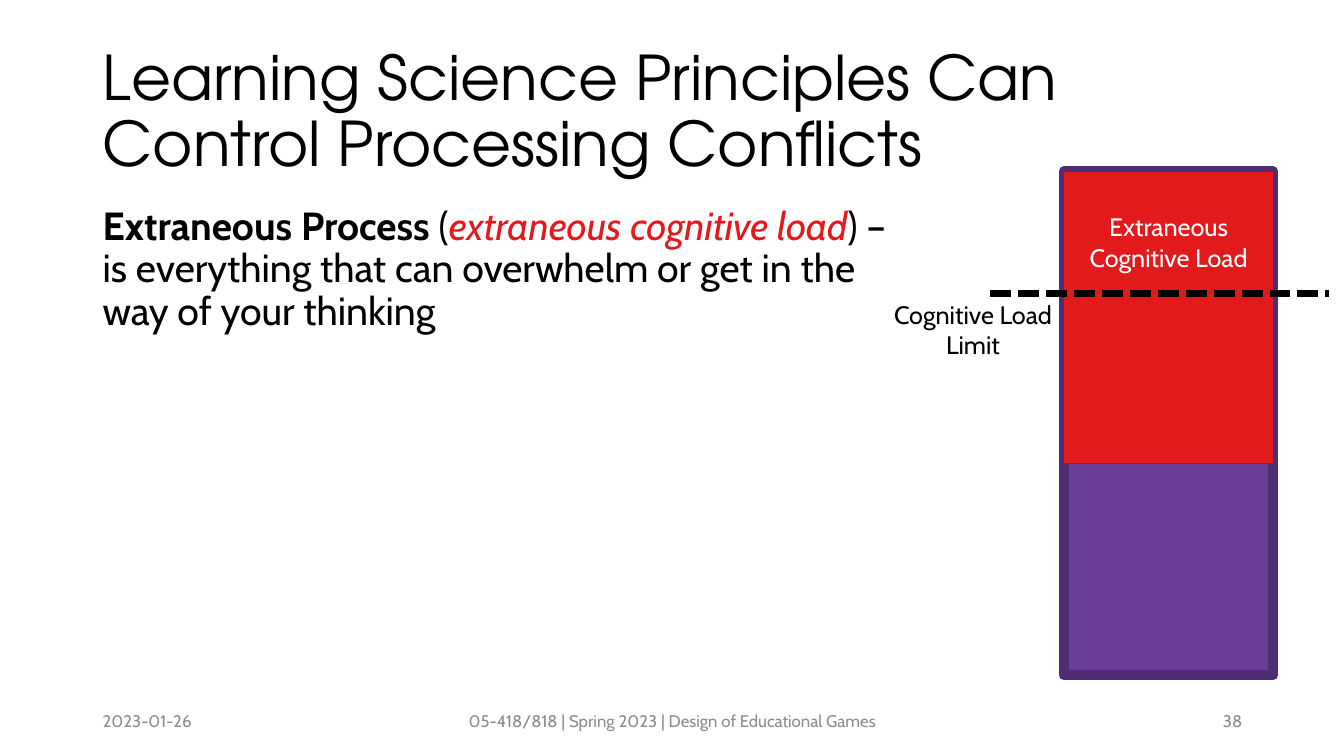
from lxml import etree
from pptx import Presentation
from pptx import util as u
from pptx.dml.color import RGBColor
from pptx.enum import dml, shapes, text
from pptx.oxml.ns import qn

COLORS = {"black": "000000", "white": "FFFFFF", "gray": "8C8C8C",
          "red": "E31A1C", "dark_red": "A81315",
          "purple": "6A3D99", "dark_purple": "4E2D71"}
BODY_FONT, TITLE_FONT = "Cabin", "TeX Gyre Adventor"
LEFT, CENTER, RIGHT = text.PP_ALIGN.LEFT, text.PP_ALIGN.CENTER, text.PP_ALIGN.RIGHT
TOP, MIDDLE = text.MSO_ANCHOR.TOP, text.MSO_ANCHOR.MIDDLE

TITLE = [("Learning Science Principles Can Control Processing Conflicts", "black", "")]
DEFINITION = [
    ("Extraneous Process ", "black", "bold"),
    ("(", "black", ""),
    ("extraneous cognitive load", "red", "italic"),
    (") – is everything that can overwhelm or get in the way of your thinking", "black", ""),
]
FOOTERS = [
    ("2023-01-26", 0.92, 3, LEFT),
    ("05-418/818 | Spring 2023 | Design of Educational Games", 4.42, 4.5, CENTER),
    ("38", 9.42, 3, RIGHT),
]
LOAD_LABEL = [("Extraneous Cognitive Load", "white", "")]
LIMIT_LABEL = [("Cognitive Load Limit", "black", "")]
BAR_LEFT, BAR_TOP, BAR_WIDTH = 10.55, 1.7, 2.08
BARS = [(5, "purple", "dark_purple", 7), (2.9, "red", "dark_red", 1)]
LIMIT_LEFT, LIMIT_RIGHT, LIMIT_Y = 9.82, 13.18, 2.91


def color(name):
    """Return the named palette colour."""
    return RGBColor.from_string(COLORS[name])


def write(shape, runs, size, font=BODY_FONT, align=LEFT, anchor=TOP, spacing=1.0):
    """Fill a shape with one paragraph of formatted runs."""
    frame = shape.text_frame
    frame.word_wrap = True
    frame.vertical_anchor = anchor
    paragraph = frame.paragraphs[0]
    paragraph.alignment = align
    paragraph.line_spacing = spacing
    for words, color_name, style in runs:
        run = paragraph.add_run()
        run.text = words
        run.font.name = font
        run.font.size = u.Pt(size)
        run.font.bold = style == "bold"
        run.font.italic = style == "italic"
        run.font.color.rgb = color(color_name)


def add_text(slide, box, runs, size, **options):
    """Add a text box at left, top, width, height in inches."""
    shape = slide.shapes.add_textbox(*map(u.Inches, box))
    write(shape, runs, size, **options)


def add_bar(slide, height, fill, line, line_width):
    """Add one rectangle of the load bar and return it."""
    box = map(u.Inches, (BAR_LEFT, BAR_TOP, BAR_WIDTH, height))
    shape = slide.shapes.add_shape(shapes.MSO_SHAPE.RECTANGLE, *box)
    shape.shadow.inherit = False
    shape.fill.solid()
    shape.fill.fore_color.rgb = color(fill)
    shape.line.color.rgb = color(line)
    shape.line.width = u.Pt(line_width)
    return shape


def add_limit_line(slide):
    """Add the dashed line that marks the cognitive load limit."""
    ends = map(u.Inches, (LIMIT_LEFT, LIMIT_Y, LIMIT_RIGHT, LIMIT_Y))
    connector = slide.shapes.add_connector(shapes.MSO_CONNECTOR.STRAIGHT, *ends)
    connector.line.color.rgb = color("black")
    connector.line.width = u.Pt(5)
    connector.line.dash_style = dml.MSO_LINE.SQUARE_DOT
    etree.SubElement(connector._element.spPr, qn("a:effectLst"))


def main():
    """Build the slide and save it."""
    presentation = Presentation()
    presentation.slide_width = u.Inches(13.33)
    presentation.slide_height = u.Inches(7.5)
    slide = presentation.slides.add_slide(presentation.slide_layouts[6])

    add_text(slide, (0.92, 0.4, 11.5, 1.45), TITLE, 44,
             font=TITLE_FONT, anchor=MIDDLE, spacing=0.9)
    add_text(slide, (0.92, 2, 8, 4.76), DEFINITION, 28, spacing=0.9)
    for words, left, width, align in FOOTERS:
        add_text(slide, (left, 6.95, width, 0.4), [(words, "gray", "")], 12,
                 align=align, anchor=MIDDLE)

    total_bar, extraneous_bar = [add_bar(slide, *bar) for bar in BARS]
    extraneous_bar.text_frame.margin_top = u.Inches(0.4)
    write(extraneous_bar, LOAD_LABEL, 18, align=CENTER)
    add_limit_line(slide)
    add_text(slide, (8.66, 2.92, 1.98, 0.71), LIMIT_LABEL, 18, align=CENTER)
    presentation.save("out.pptx")


if __name__ == "__main__":
    main()
